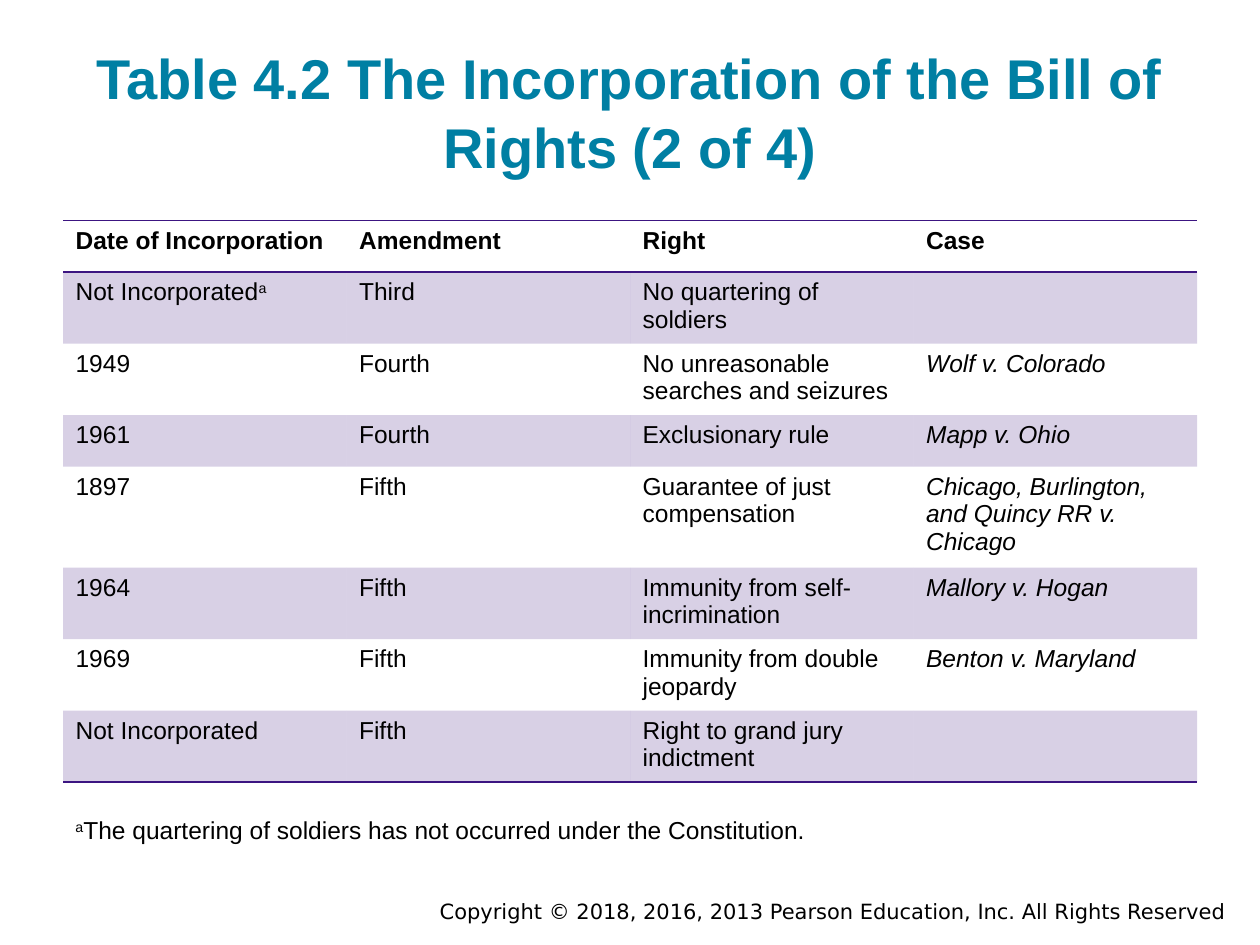
from pptx import Presentation
from pptx.dml.color import RGBColor
from pptx.enum.text import MSO_ANCHOR, MSO_AUTO_SIZE, PP_ALIGN
from pptx.oxml import parse_xml
from pptx.oxml.ns import nsdecls, qn
from pptx.util import Inches, Pt
from lxml.etree import SubElement

TEAL = RGBColor(0x00, 0x7F, 0xA3)
PURPLE = RGBColor(0x3C, 0x15, 0x81)
BLACK = RGBColor(0x00, 0x00, 0x00)
NO_STYLE = "{2D5ABB26-0587-4C30-8999-92F81FD0307C}"

HEADERS = ("Date of Incorporation", "Amendment", "Right", "Case")
RIGHTS = (
    ("Not Incorporated^a", "Third", "No quartering of soldiers", ""),
    ("1949", "Fourth", "No unreasonable searches and seizures", "Wolf v. Colorado"),
    ("1961", "Fourth", "Exclusionary rule", "Mapp v. Ohio"),
    ("1897", "Fifth", "Guarantee of just compensation",
     "Chicago, Burlington, and Quincy RR v. Chicago"),
    ("1964", "Fifth", "Immunity from self-incrimination", "Mallory v. Hogan"),
    ("1969", "Fifth", "Immunity from double jeopardy", "Benton v. Maryland"),
    ("Not Incorporated", "Fifth", "Right to grand jury indictment", ""),
)


def write(frame, text, size=14, font="Arial", color=BLACK, bold=False,
          italic=False, align=PP_ALIGN.LEFT):
    """Fill the frame; text between ^ marks is set as superscript."""
    paragraph = frame.paragraphs[0]
    paragraph.alignment = align
    paragraph.font.size = Pt(size)
    for index, part in enumerate(text.split("^")):
        if not part:
            continue
        run = paragraph.add_run()
        run.text = part
        run.font.name = font
        run.font.size = Pt(size)
        run.font.bold = bold
        run.font.italic = italic
        run.font.color.rgb = color
        if index % 2:
            run.font._element.set("baseline", "30000")


def add_border(cell, side):
    cell._tc.get_or_add_tcPr().append(parse_xml(
        f'<a:{side} {nsdecls("a")} w="12700"><a:solidFill>'
        f'<a:srgbClr val="{PURPLE}"/></a:solidFill></a:{side}>'))


def tint(cell, percent):
    cell.fill.solid()
    cell.fill.fore_color.rgb = PURPLE
    srgb = next(cell._tc.tcPr.find(qn("a:solidFill")).iter(qn("a:srgbClr")))
    SubElement(srgb, qn("a:alpha")).set("val", str(percent * 1000))


class SlideBuilder:
    def __init__(self, slide):
        self.slide = slide

    def title(self, text, left, top, width, height):
        title = self.slide.shapes.title
        title.left, title.top = Inches(left), Inches(top)
        title.width, title.height = Inches(width), Inches(height)
        frame = title.text_frame
        frame.auto_size = MSO_AUTO_SIZE.NONE
        frame.vertical_anchor = MSO_ANCHOR.BOTTOM
        frame.margin_left = frame.margin_right = Inches(0.1)
        frame.margin_top = frame.margin_bottom = Inches(0.1)
        write(frame, text, size=32, color=TEAL, bold=True, align=PP_ALIGN.CENTER)
        frame.paragraphs[0].line_spacing = 1.04

    def text(self, text, left, top, width, height, **style):
        box = self.slide.shapes.add_textbox(
            Inches(left), Inches(top), Inches(width), Inches(height))
        box.text_frame.word_wrap = True
        write(box.text_frame, text, **style)

    def table(self, headers, records, left, top, width, row_height):
        rows = (headers, *records)
        last = len(rows) - 1
        table = self.slide.shapes.add_table(
            len(rows), len(headers), Inches(left), Inches(top),
            Inches(width), Inches(row_height * len(rows))).table
        table._tbl.tblPr.find(qn("a:tableStyleId")).text = NO_STYLE
        for r, row in enumerate(rows):
            table.rows[r].height = Inches(row_height)
            for c, text in enumerate(row):
                cell = table.cell(r, c)
                is_case = r > 0 and c == len(headers) - 1
                write(cell.text_frame, text, bold=r == 0, italic=is_case)
                if r == 0:
                    add_border(cell, "lnT")
                if r in (0, last):
                    add_border(cell, "lnB")
                if r % 2:
                    tint(cell, 20)
                else:
                    cell.fill.background()


def main():
    deck = Presentation()
    deck.slide_width, deck.slide_height = Inches(10), Inches(7.5)
    builder = SlideBuilder(deck.slides.add_slide(deck.slide_layouts[5]))
    builder.text(
        "Copyright © 2018, 2016, 2013 Pearson Education, Inc. All Rights Reserved",
        2, 7.08, 7.83, 0.3, size=12, font="DejaVu Sans", align=PP_ALIGN.RIGHT)
    builder.title("Table 4.2 The Incorporation of the Bill of Rights (2 of 4)",
                  0.5, 0.33, 9, 1.2)
    builder.table(HEADERS, RIGHTS, 0.5, 1.75, 9, 0.41)
    builder.text(
        "^a^The quartering of soldiers has not occurred under the Constitution.",
        0.5, 6.42, 7.58, 0.34)
    deck.save("out.pptx")


if __name__ == "__main__":
    main()
